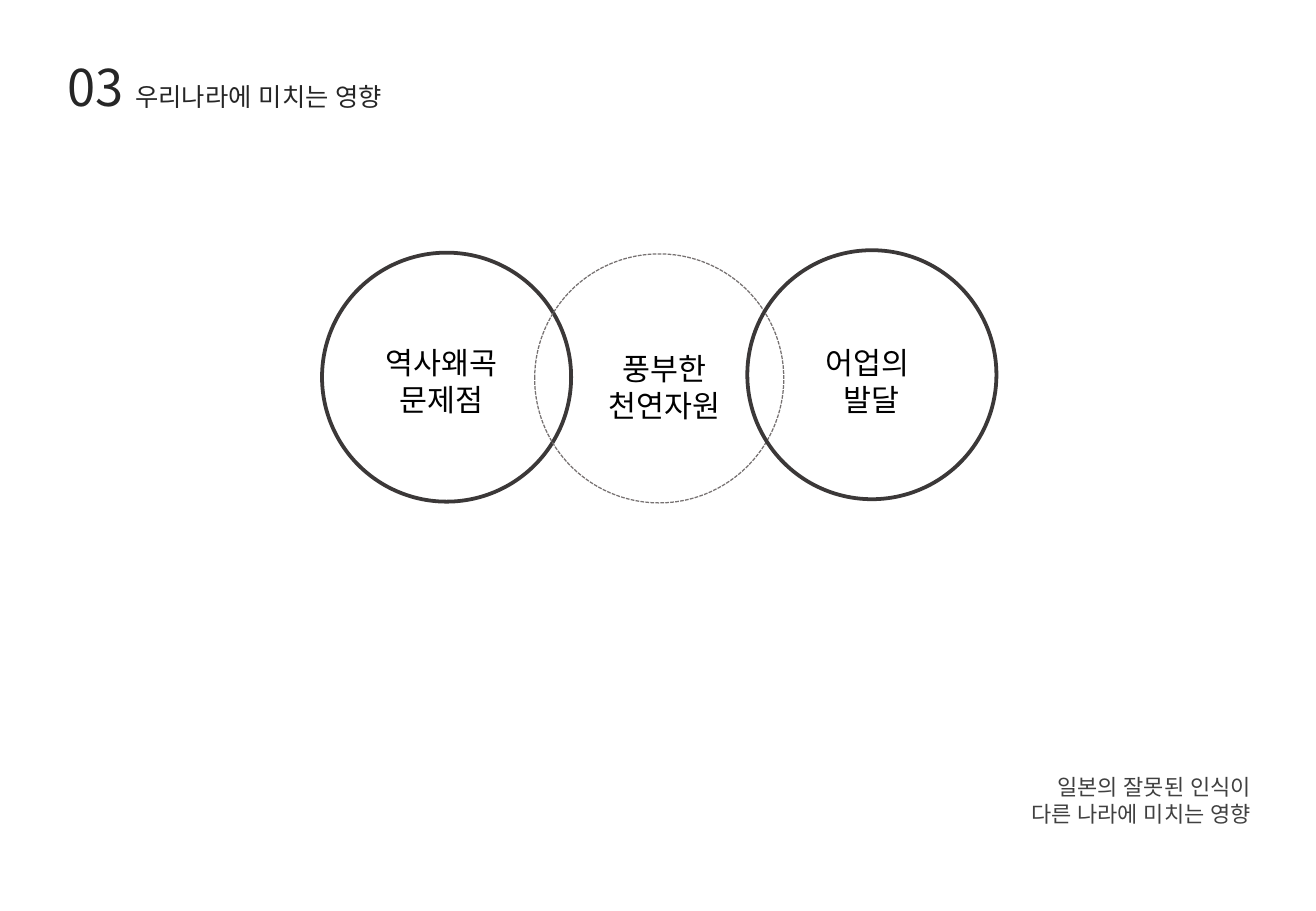
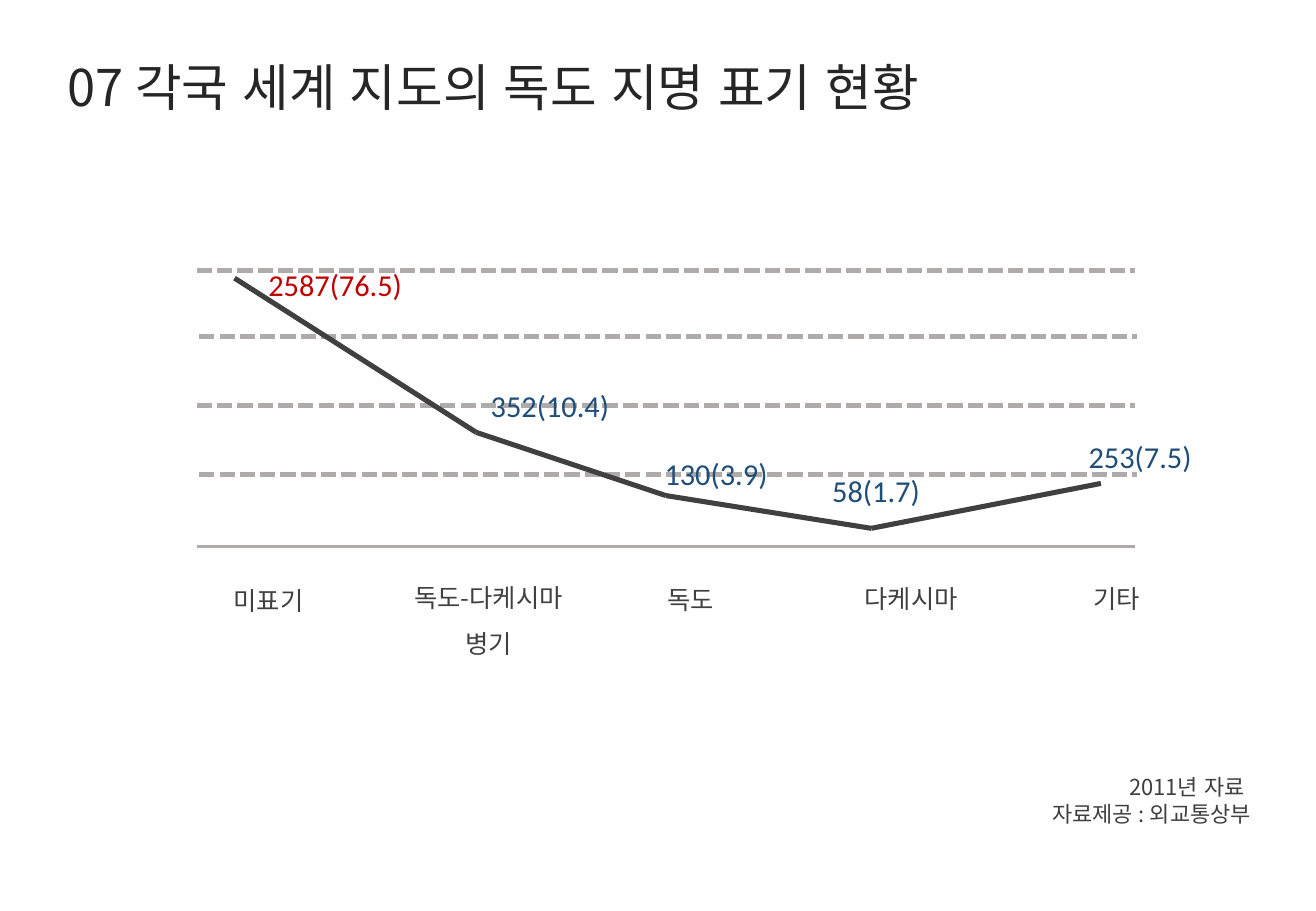
from dataclasses import dataclass
from itertools import pairwise

from lxml import etree
from pptx import Presentation, util as u
from pptx.dml.color import RGBColor
from pptx.enum import dml, lang, shapes, text
from pptx.oxml.ns import qn

COLORS = {
    "title": "262626", "body": "404040", "black": "000000",
    "ring": "3B3838", "dashed_ring": "767171", "grid": "AFABAB",
    "high": "C00000", "value": "1F4E79",
}
NOTO = "Noto Sans CJK KR"
LEADING = 1.22
LEFT, CENTER, RIGHT = text.PP_ALIGN.LEFT, text.PP_ALIGN.CENTER, text.PP_ALIGN.RIGHT
DASH = dml.MSO_LINE.SQUARE_DOT


@dataclass(frozen=True)
class Style:
    size: float
    color: str
    font: str = NOTO
    align: text.PP_ALIGN = LEFT
    spacing: float = 1.0


@dataclass(frozen=True)
class Label:
    left: float
    top: float
    width: float
    height: float
    lines: tuple[str, ...]


@dataclass(frozen=True)
class Ring:
    left: float
    top: float
    color: str
    weight: float
    dash: dml.MSO_LINE | None = None


TITLE = Style(30, "title")
SUBTITLE = Style(15, "title")
FOOTER = Style(13, "body", align=RIGHT)
TOPIC = Style(18, "black", "Calibri", CENTER)
CATEGORY = Style(15, "body", align=CENTER, spacing=1.5)
VALUE = Style(18, "value", "Calibri")
HIGH_VALUE = Style(18, "high", "Calibri")

RING_SIZE = 2.05
RINGS = (
    Ring(2.65, 2.08, "ring", 2.25),
    Ring(4.4, 2.09, "dashed_ring", 0.75, DASH),
    Ring(6.15, 2.06, "ring", 2.25),
)
TOPICS = (
    Label(2.95, 2.78, 1.36, 0.71, ("역사왜곡 문제점",)),
    Label(4.7, 2.83, 1.54, 0.71, ("풍부한 천연자원",)),
    Label(6.48, 2.78, 1.39, 0.71, ("어업의 ", "발달")),
)
GRID_WIDTH = 7.72
GRID = ((1.64, 3.91), (1.64, 2.77), (1.62, 3.34), (1.62, 2.23))
AXIS = (1.62, 4.5)
POINTS = ((1.93, 2.29), (3.92, 3.56), (5.48, 4.08), (7.17, 4.35), (9.06, 3.98))
CATEGORIES = (
    Label(1.09, 4.64, 2.24, 0.43, ("미표기",)),
    Label(2.9, 4.61, 2.24, 0.86, ("독도-다케시마", "병기")),
    Label(4.49, 4.63, 2.39, 0.43, ("독도",)),
    Label(6.38, 4.62, 2.24, 0.43, ("다케시마",)),
    Label(8.07, 4.62, 2.24, 0.43, ("기타",)),
)
VALUES = (
    Label(2.11, 2.14, 1.73, 0.4, ("2587(76.5)",)),
    Label(3.94, 3.13, 1.2, 0.4, ("352(10.4)",)),
    Label(5.37, 3.69, 1.19, 0.4, ("130(3.9)",)),
    Label(6.75, 3.83, 1.19, 0.4, ("58(1.7)",)),
    Label(8.86, 3.55, 1.09, 0.4, ("253(7.5)",)),
)


def rgb(name: str) -> RGBColor:
    return RGBColor.from_string(COLORS[name])


def add_run(p, content: str, style: Style) -> None:
    r = p.add_run()
    r.text = content
    formats = {
        "size": u.Pt(style.size),
        "name": style.font,
        "language_id": lang.MSO_LANGUAGE_ID.KOREAN,
    }
    for name, value in formats.items():
        setattr(r.font, name, value)
    r.font.color.rgb = rgb(style.color)
    latin = r.font._element.find(qn("a:latin"))
    ea = etree.Element(qn("a:ea"), typeface=NOTO)
    latin.addnext(ea)


def add_label(s, label: Label, style: Style):
    box = (label.left, label.top, label.width, label.height)
    sp = s.shapes.add_textbox(*map(u.Inches, box))
    tf = sp.text_frame
    tf.word_wrap = True
    for i, line in enumerate(label.lines):
        p = tf.add_paragraph() if i else tf.paragraphs[0]
        formats = {
            "alignment": style.align,
            "line_spacing": u.Pt(style.size * LEADING * style.spacing),
        }
        for name, value in formats.items():
            setattr(p, name, value)
        add_run(p, line, style)
    return sp


def format_line(line, color: str, weight: float, dash: dml.MSO_LINE | None = None) -> None:
    line.color.rgb = rgb(color)
    for name, value in {"width": u.Pt(weight), "dash_style": dash}.items():
        setattr(line, name, value)


def add_ring(s, ring: Ring) -> None:
    box = (ring.left, ring.top, RING_SIZE, RING_SIZE)
    sp = s.shapes.add_shape(shapes.MSO_SHAPE.OVAL, *map(u.Inches, box))
    sp.shadow.inherit = False
    sp.fill.background()
    format_line(sp.line, ring.color, ring.weight, ring.dash)


def add_line(s, start: tuple[float, float], end: tuple[float, float],
             color: str, weight: float, dash: dml.MSO_LINE | None = None) -> None:
    cx = s.shapes.add_connector(shapes.MSO_CONNECTOR.STRAIGHT, *map(u.Inches, start + end))
    format_line(cx.line, color, weight, dash)
    etree.SubElement(cx._element.spPr, qn("a:effectLst"))


def add_rule(s, start: tuple[float, float], weight: float, dash: dml.MSO_LINE | None = None) -> None:
    left, top = start
    add_line(s, start, (left + GRID_WIDTH, top), "grid", weight, dash)


def add_page(prs, title: str, width: float, footer: tuple[str, ...], subtitle: str = ""):
    s = prs.slides.add_slide(prs.slide_layouts[6])
    sp = add_label(s, Label(0.46, 0.4, width, 0.61, (title,)), TITLE)
    if subtitle:
        add_run(sp.text_frame.paragraphs[0], subtitle, SUBTITLE)
    add_label(s, Label(7.05, 6.32, 3.34, 0.54, footer), FOOTER)
    return s


def build_influence(prs) -> None:
    s = add_page(prs, "03 ", 6.17, ("일본의 잘못된 인식이", "다른 나라에 미치는 영향"),
                 "우리나라에 미치는 영향")
    for ring in RINGS:
        add_ring(s, ring)
    for label in TOPICS:
        add_label(s, label, TOPIC)


def build_map_names(prs) -> None:
    s = add_page(prs, "07 각국 세계 지도의 독도 지명 표기 현황", 8.59,
                 ("2011년 자료 ", "자료제공 : 외교통상부"))
    add_rule(s, AXIS, 1.5)
    for start in GRID:
        add_rule(s, start, 3, DASH)
    for label in CATEGORIES:
        add_label(s, label, CATEGORY)
    for start, end in pairwise(POINTS):
        add_line(s, start, end, "body", 3)
    for i, label in enumerate(VALUES):
        add_label(s, label, VALUE if i else HIGH_VALUE)


def main() -> None:
    prs = Presentation()
    prs.slide_width, prs.slide_height = u.Inches(10.83), u.Inches(7.5)
    build_influence(prs)
    build_map_names(prs)
    prs.save("out.pptx")


if __name__ == "__main__":
    main()
